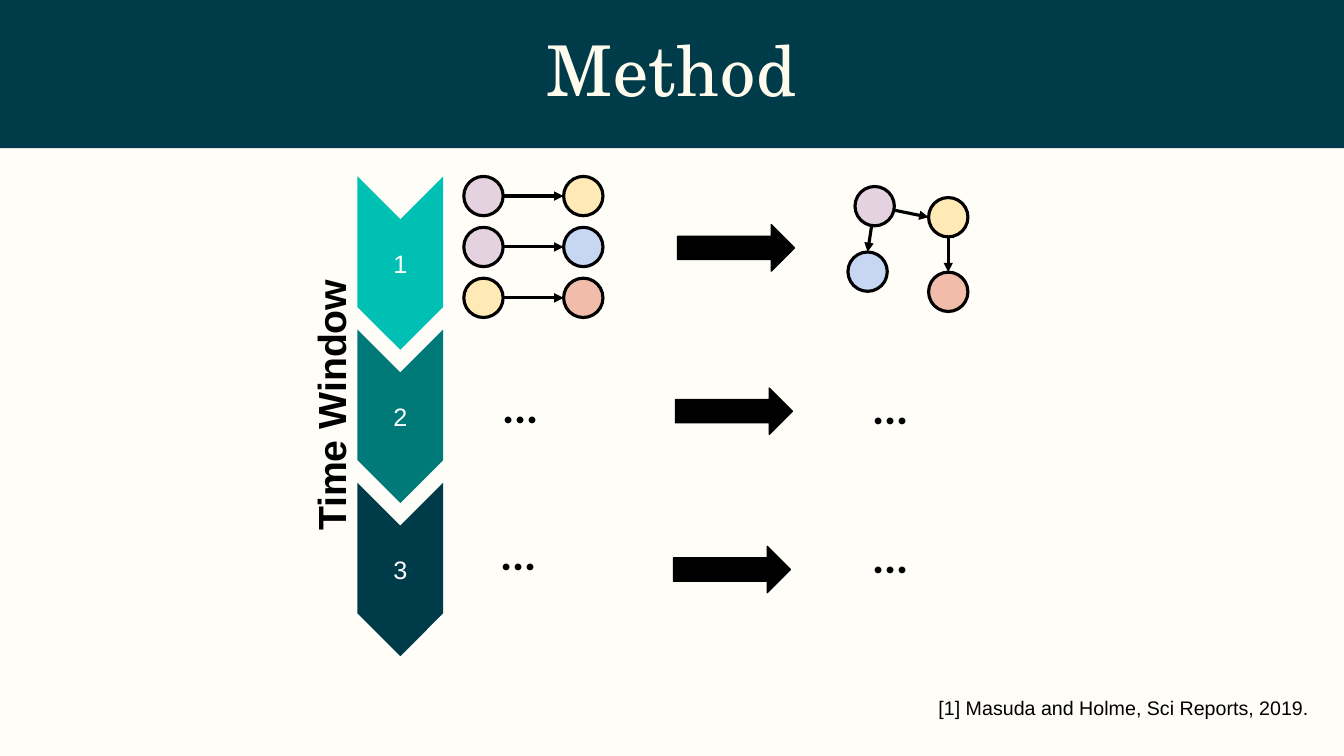
from lxml import etree
from pptx import Presentation
from pptx.dml.color import RGBColor
from pptx.enum.shapes import MSO_CONNECTOR as CONN, MSO_SHAPE as SHAPE
from pptx.enum.text import MSO_ANCHOR as ANCHOR, PP_ALIGN as ALIGN
from pptx.oxml.ns import qn
from pptx.util import Inches, Pt

NAVY, TEAL, TURQUOISE = "003B49", "007A79", "00BFB3"
BLACK, WHITE, CREAM, PAPER = "000000", "FFFFFF", "FFFCEE", "FFFDF8"
MAUVE, YELLOW, BLUE, CORAL = "E4D2E0", "FFE9B5", "C6D6F3", "F1BCAA"
NODE = 0.39


def rgb(value):
    return RGBColor.from_string(value)


def add_run(p, text, size, font, color=BLACK, bold=False):
    r = p.add_run()
    r.text = text
    r.font.size, r.font.name, r.font.bold = Pt(size), font, bold
    r.font.color.rgb = rgb(color)
    return r


def add_shape(slide, kind, box, fill, line=None, width=2.25):
    sp = slide.shapes.add_shape(kind, *map(Inches, box))
    sp.shadow.inherit = False
    sp.fill.solid()
    sp.fill.fore_color.rgb = rgb(fill)
    if line:
        sp.line.color.rgb = rgb(line)
        sp.line.width = Pt(width)
    else:
        sp.line.fill.background()
    return sp


def add_label(slide, box, text, size, font, bold=False):
    tb = slide.shapes.add_textbox(*map(Inches, box))
    tb.text_frame.word_wrap = True
    add_run(tb.text_frame.paragraphs[0], text, size, font, bold=bold)
    return tb


def add_node(slide, left, top, color):
    add_shape(slide, SHAPE.OVAL, (left, top, NODE, NODE), color, BLACK)


def add_edge(slide, x1, y1, x2, y2):
    cx = slide.shapes.add_connector(CONN.STRAIGHT, *map(Inches, (x1, y1, x2, y2)))
    cx.line.color.rgb = rgb(BLACK)
    cx.line.width = Pt(2.25)
    etree.SubElement(cx.line._get_or_add_ln(), qn("a:tailEnd"), type="triangle")
    etree.SubElement(cx._element.spPr, qn("a:effectLst"))


def add_header(slide, width, height):
    band = add_shape(slide, SHAPE.RECTANGLE, (0, 0, width, height), NAVY)
    title = slide.shapes.title
    band._element.addnext(title._element)
    title.left, title.top, title.width, title.height = map(
        Inches, (0.86, 0.31, width - 1.73, 0.85))
    tf = title.text_frame
    tf.vertical_anchor = ANCHOR.MIDDLE
    p = tf.paragraphs[0]
    p.alignment, p.line_spacing = ALIGN.CENTER, 0.9
    r = add_run(p, "Method", 50, "TeX Gyre Schola", CREAM)
    r.font._element.set("spc", "80")


def add_windows(slide, center_x, top, length, width, step):
    """Stack the numbered time windows as downward arrows."""
    for i, color in enumerate((TURQUOISE, TEAL, NAVY)):
        box = (center_x - length / 2, top + i * step + (length - width) / 2, length, width)
        sp = add_shape(slide, SHAPE.NOTCHED_RIGHT_ARROW, box, color)
        sp.adjustments[0], sp.adjustments[1] = 1, 0.5
        sp.rotation = 90
        tf = sp.text_frame
        tf.vertical_anchor = ANCHOR.MIDDLE
        tf._txBody.bodyPr.set("vert", "vert270")
        p = tf.paragraphs[0]
        p.alignment = ALIGN.CENTER
        add_run(p, str(i + 1), 18, "Arial", WHITE)


def add_contacts(slide, left, top, step=0.505, gap=0.6):
    """Draw one source-to-target pair per row."""
    pairs = ((MAUVE, YELLOW), (MAUVE, BLUE), (YELLOW, CORAL))
    for i, (source, target) in enumerate(pairs):
        y = top + i * step
        start, end = left + NODE, left + NODE + gap
        add_node(slide, left, y, source)
        add_node(slide, end, y, target)
        add_edge(slide, start, y + NODE / 2, end, y + NODE / 2)


def add_network(slide, left, top):
    """Draw the contacts merged into one graph, edges beneath nodes."""
    half = NODE / 2
    mauve, yellow, blue, coral = [
        (left + dx, top + dy) for dx, dy in ((0.07, 0), (0.8, 0.11), (0, 0.65), (0.8, 0.85))]
    for source, target, dx, dy in ((yellow, coral, half, 0),
                                   (mauve, yellow, 0, half),
                                   (mauve, blue, half, 0)):
        add_edge(slide, source[0] + half, source[1] + half, target[0] + dx, target[1] + dy)
    for node, color in ((mauve, MAUVE), (yellow, YELLOW), (blue, BLUE), (coral, CORAL)):
        add_node(slide, *node, color)


def add_steps(slide):
    for left, top in ((6.72, 2.23), (6.7, 3.85), (6.68, 5.42)):
        add_shape(slide, SHAPE.RIGHT_ARROW, (left, top, 1.16, 0.46), BLACK, BLACK, 1)
    for left, top in ((4.89, 3.71), (8.56, 3.72), (4.87, 5.17), (8.56, 5.2)):
        add_label(slide, (left, top, 0.59, 0.64), "…", 32, "Lato", True)


def build_method_slide(prs):
    slide = prs.slides.add_slide(prs.slide_layouts[5])
    slide.background.fill.solid()
    slide.background.fill.fore_color.rgb = rgb(PAPER)
    add_header(slide, 13.33, 1.47)
    add_windows(slide, 3.97, 1.75, 1.72, 0.85, 1.52)
    add_contacts(slide, 4.6, 1.75)
    add_network(slide, 8.41, 1.85)
    add_steps(slide)
    axis = add_label(slide, (1.86, 3.66, 2.84, 0.57), "Time Window", 28, "Arial", True)
    axis.rotation = 270
    add_label(slide, (9.21, 6.85, 4.1, 0.34),
              "[1] Masuda and Holme, Sci Reports, 2019.", 14, "Arial")


def main():
    prs = Presentation()
    prs.slide_width, prs.slide_height = Inches(13.33), Inches(7.5)
    build_method_slide(prs)
    prs.save("out.pptx")


if __name__ == "__main__":
    main()
